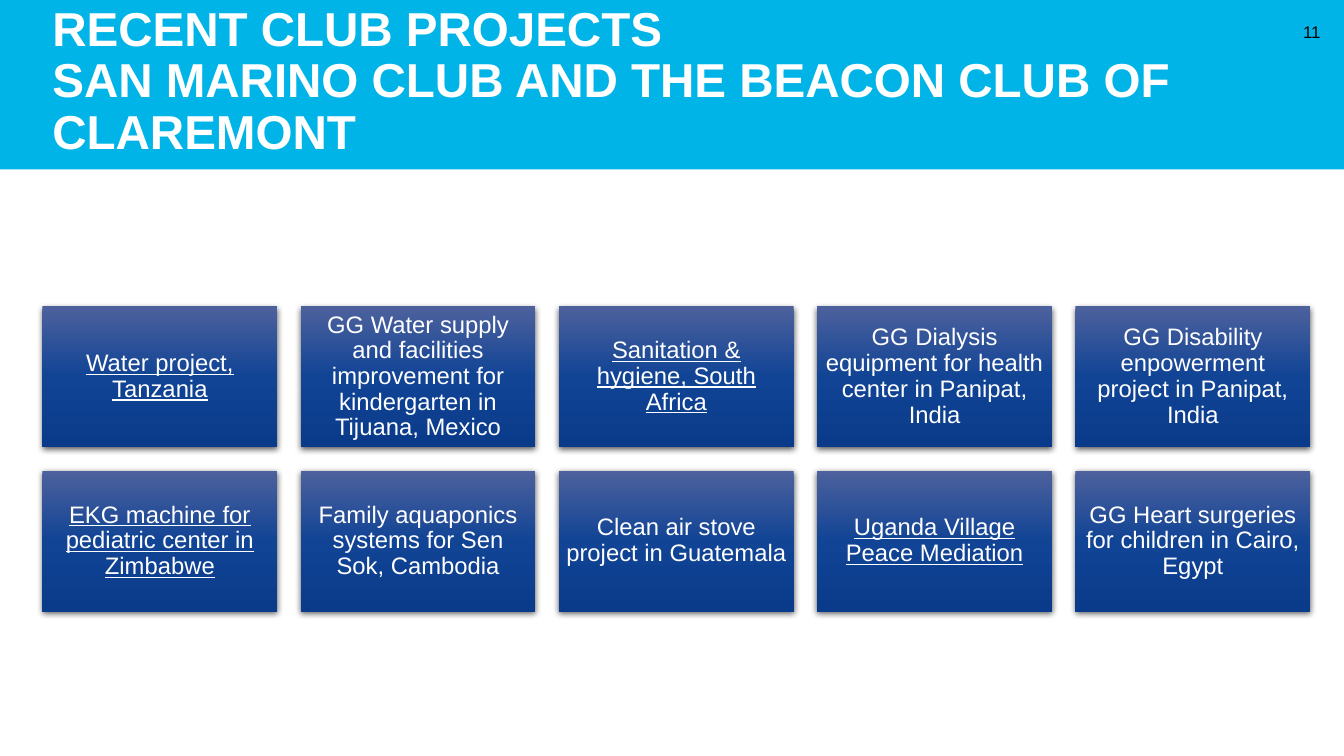
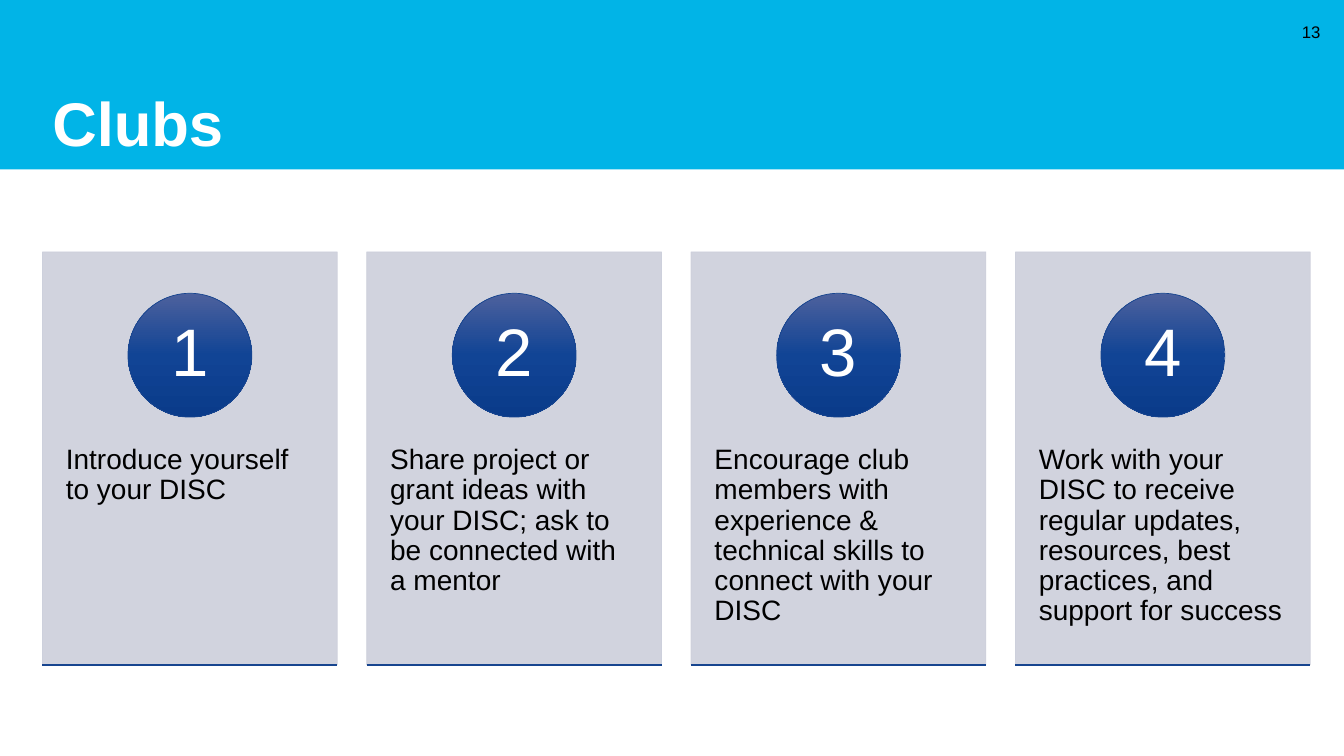
import copy

import pptx
import pptx.dml.color
import pptx.enum.shapes
import pptx.enum.text
import pptx.oxml
import pptx.oxml.ns
import pptx.util
from pptx.dml.color import RGBColor
from pptx.enum.shapes import MSO_CONNECTOR, MSO_SHAPE
from pptx.enum.text import MSO_ANCHOR, PP_ALIGN
from pptx.oxml.ns import qn
from pptx.util import Cm

# Content
PROJECTS_TITLE = "RECENT CLUB PROJECTS\vSAN MARINO CLUB AND THE BEACON CLUB OF CLAREMONT"
PROJECTS = [  # (project, underlined)
    ("Water project, Tanzania", True),
    ("GG Water supply and facilities improvement for kindergarten in Tijuana, Mexico", False),
    ("Sanitation & hygiene, South Africa", True),
    ("GG Dialysis equipment for health center in Panipat, India", False),
    ("GG Disability enpowerment project in Panipat, India", False),
    ("EKG machine for pediatric center in Zimbabwe", True),
    ("Family aquaponics systems for Sen Sok, Cambodia", False),
    ("Clean air stove project in Guatemala", False),
    ("Uganda Village Peace Mediation", True),
    ("GG Heart surgeries for children in Cairo, Egypt", False),
]
CLUB_STEPS = [
    "Introduce yourself to your DISC",
    "Share project or grant ideas with your DISC; ask to be connected with a mentor",
    "Encourage club members with experience & technical skills to connect with your DISC",
    "Work with your DISC to receive regular updates, resources, best practices, and support for success",
]

# Shared style
FONT = "Arial"
WHITE = RGBColor(0xFF, 0xFF, 0xFF)
BLACK = RGBColor(0x00, 0x00, 0x00)
SKY = RGBColor(0x01, 0xB4, 0xE7)
ROYAL = RGBColor(0x17, 0x45, 0x8F)
MIST = RGBColor(0xCC, 0xCF, 0xDB)
BLUE_STOPS = [
    (0, RGBColor(0x4D, 0x61, 0x9D)),
    (0.5, RGBColor(0x11, 0x44, 0x95)),
    (1, RGBColor(0x0A, 0x3B, 0x8A)),
]

# Shared measures, in cm
SLIDE_W, SLIDE_H = 33.87, 19.05
BAND_H = 4.27
LEFT, CONTENT_W = 1.07, 31.95
GAP_RATIO = 0.1  # gap between columns, as a share of column width


def columns(count):
    """Width of each column and the left edges of all of them."""
    width = CONTENT_W / (count + GAP_RATIO * (count - 1))
    return width, [LEFT + i * width * (1 + GAP_RATIO) for i in range(count)]


def write(shape, text, size, color, align=PP_ALIGN.LEFT, anchor=MSO_ANCHOR.TOP,
          insets=(0.25, 0.13, 0.25, 0.13), bold=False, underline=False):
    frame = shape.text_frame
    frame.word_wrap = True
    frame.vertical_anchor = anchor
    (frame.margin_left, frame.margin_top,
     frame.margin_right, frame.margin_bottom) = [Cm(inset) for inset in insets]
    frame.text = text
    paragraph = frame.paragraphs[0]
    paragraph.alignment = align
    paragraph.line_spacing = 0.9
    font = paragraph.font
    font.name, font.size, font.color.rgb = FONT, pptx.util.Pt(size), color
    font.bold, font.underline = bold, underline


def add_box(slide, kind, left, top, width, height, fill=None, line=None):
    """Preset shape; without a fill colour it gets the blue gradient."""
    box = slide.shapes.add_shape(kind, Cm(left), Cm(top), Cm(width), Cm(height))
    box.shadow.inherit = False
    if fill is not None:
        box.fill.solid()
        box.fill.fore_color.rgb = fill
    else:
        box.fill.gradient()
        box.fill.gradient_angle = 270
        stop_list = box._element.spPr.find(".//" + qn("a:gsLst"))
        stop_list.insert(1, copy.deepcopy(stop_list[0]))
        for stop, (position, color) in zip(box.fill.gradient_stops, BLUE_STOPS):
            stop.position, stop.color.rgb = position, color
    if line is None:
        box.line.fill.background()
    else:
        box.line.color.rgb = line
        box.line.width = pptx.util.Pt(0.5)
    return box


def add_drop_shadow(box):
    effects = box._element.spPr.find(qn("a:effectLst"))
    shadow = pptx.oxml.parse_xml(
        '<a:outerShdw xmlns:a="http://schemas.openxmlformats.org/drawingml/2006/main"'
        ' blurRad="57150" dist="19050" dir="5400000" algn="ctr" rotWithShape="0">'
        '<a:srgbClr val="000000"><a:alpha val="63000"/></a:srgbClr></a:outerShdw>')
    effects.append(shadow)


def make_translucent(box, percent):
    for color in box._element.spPr.iter(qn("a:srgbClr")):
        alpha = color.makeelement(qn("a:alpha"), {"val": str(percent * 1000)})
        color.append(alpha)


def add_slide(deck, title, title_size, number):
    """Blank slide with the shared band, title and slide number."""
    slide = deck.slides.add_slide(deck.slide_layouts[6])
    add_box(slide, MSO_SHAPE.RECTANGLE, 0, 0, SLIDE_W, BAND_H, fill=SKY)
    heading = slide.shapes.add_textbox(Cm(LEFT), Cm(0), Cm(CONTENT_W), Cm(BAND_H))
    write(heading, title, title_size, WHITE, anchor=MSO_ANCHOR.BOTTOM,
          insets=(0.25, 0, 0.25, 0.25), bold=True)
    page = slide.shapes.add_textbox(Cm(32.36), Cm(0.33), Cm(1.17), Cm(1.02))
    write(page, number, 12, BLACK, PP_ALIGN.RIGHT, MSO_ANCHOR.MIDDLE)
    return slide


def build_projects(deck):
    slide = add_slide(deck, PROJECTS_TITLE, 34, "11")
    per_row, first_top = 5, 7.72
    width, lefts = columns(per_row)
    height = 0.6 * width
    for i, (project, underlined) in enumerate(PROJECTS):
        row, column = divmod(i, per_row)
        top = first_top + row * (height + GAP_RATIO * width)
        tile = add_box(slide, MSO_SHAPE.RECTANGLE, lefts[column], top, width, height)
        add_drop_shadow(tile)
        write(tile, project, 17, WHITE, PP_ALIGN.CENTER, MSO_ANCHOR.MIDDLE,
              insets=(0.18,) * 4, underline=underlined)


def build_clubs(deck):
    slide = add_slide(deck, "Clubs", 44, "13")
    top = 6.35
    width, lefts = columns(len(CLUB_STEPS))
    height = 1.4 * width
    bottom = top + height
    diameter = 0.3 * height
    for number, (left, step) in enumerate(zip(lefts, CLUB_STEPS), start=1):
        # Card, with its text below the circle
        card = add_box(slide, MSO_SHAPE.RECTANGLE, left, top, width, height, MIST, MIST)
        make_translucent(card, 90)
        write(card, step, 20, BLACK, insets=(0.59, 0.38 * height + 0.92, 0.59, 0))
        # Numbered circle
        circle = add_box(slide, MSO_SHAPE.OVAL, left + (width - diameter) / 2,
                         top + 0.1 * height, diameter, diameter, line=ROYAL)
        write(circle, str(number), 48, WHITE, PP_ALIGN.CENTER, MSO_ANCHOR.MIDDLE,
              insets=(0.25, 0.03, 0.25, 0.03))
        # Base line
        base = slide.shapes.add_connector(MSO_CONNECTOR.STRAIGHT, Cm(left), Cm(bottom),
                                          Cm(left + width), Cm(bottom))
        base.line.color.rgb = ROYAL
        base.line.width = pptx.util.Pt(1.25)
        properties = base._element.spPr
        properties.append(properties.makeelement(qn("a:effectLst"), {}))


def main():
    deck = pptx.Presentation()
    deck.slide_width, deck.slide_height = Cm(SLIDE_W), Cm(SLIDE_H)
    build_projects(deck)
    build_clubs(deck)
    deck.save("out.pptx")


if __name__ == "__main__":
    main()
